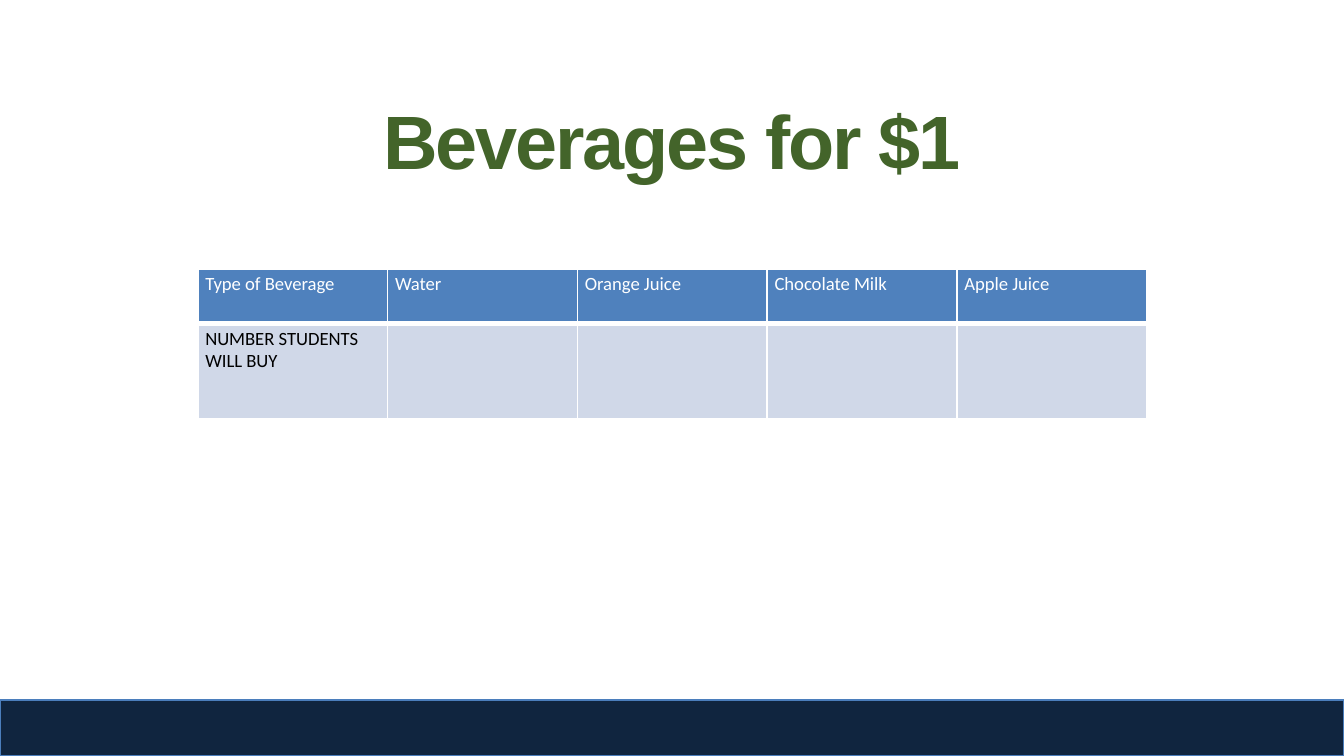
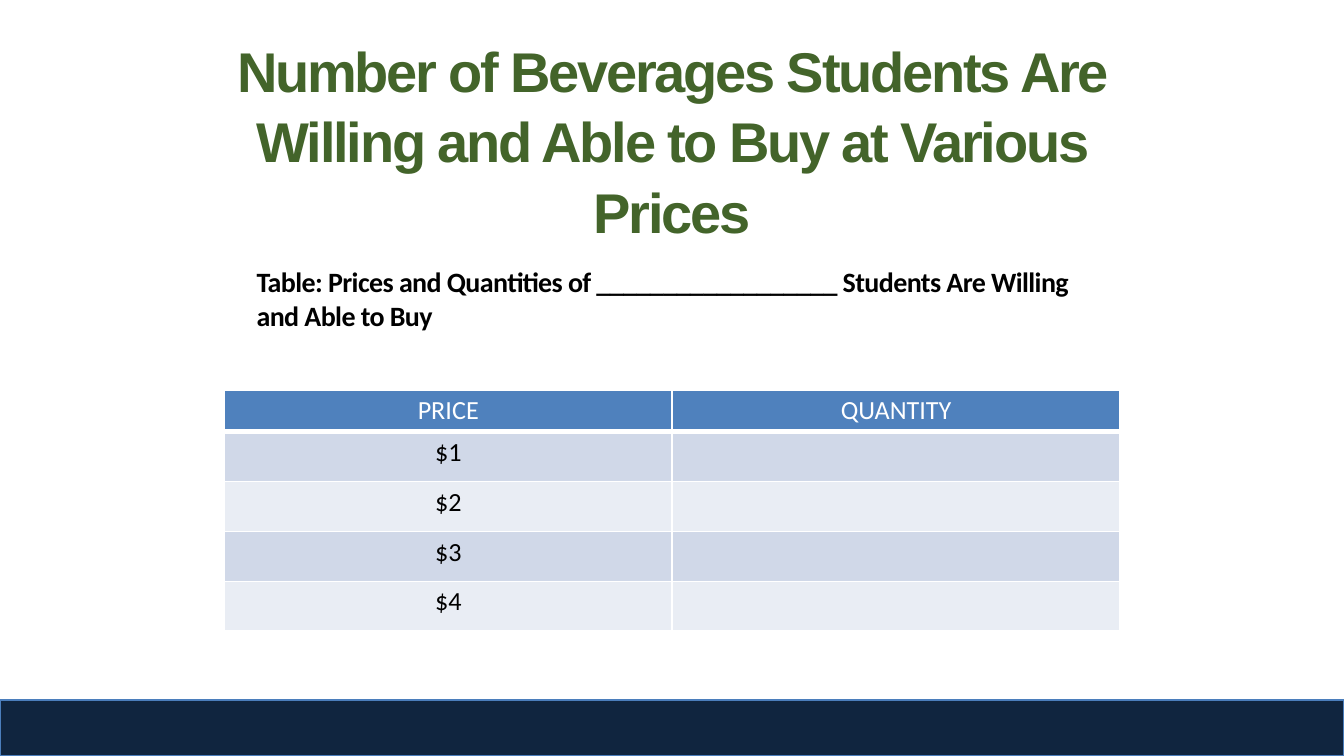
from lxml.etree import SubElement
from pptx import Presentation
from pptx.dml.color import RGBColor as Rgb
from pptx.enum.shapes import MSO_SHAPE as Shape
from pptx.enum.text import MSO_ANCHOR as Anchor, PP_ALIGN as Align
from pptx.oxml.ns import qn
from pptx.util import Cm, Pt

COLORS = {
    "title": "43642A",
    "band": "10253F",
    "band_line": "4B7EBC",
    "header": "4F81BD",
    "dark_row": "D0D8E8",
    "light_row": "E9EDF4",
    "white": "FFFFFF",
    "black": "000000",
}
PAGE_WIDTH, PAGE_HEIGHT = 25.4, 14.29
BAND_HEIGHT = 1.06
TITLE_BOX = (3.25, 1.09, 18.9, 3.07)


def color(name):
    """Return the named colour."""
    return Rgb.from_string(COLORS[name])


def write(frame, text, size, font="Calibri", ink="black", bold=False,
          align=Align.LEFT, tracking=0, leading=None):
    """Write one formatted paragraph into a text frame."""
    frame.word_wrap = True
    para = frame.paragraphs[0]
    para.alignment = align
    if leading:
        para.line_spacing = leading
    span = para.add_run()
    span.text = text
    span.font.size = Pt(size)
    span.font.name = font
    span.font.bold = bold
    span.font.color.rgb = color(ink)
    if tracking:
        span.font._element.set("spc", str(round(tracking * 100)))


def add_text(page, box, text, size, anchor=Anchor.TOP, **style):
    """Place a text box in the given box."""
    frame = page.shapes.add_textbox(*map(Cm, box)).text_frame
    frame.vertical_anchor = anchor
    write(frame, text, size, **style)


def add_title(page, text, size, leading=None):
    """Place the slide title."""
    add_text(page, TITLE_BOX, text, size, Anchor.MIDDLE, font="Arial", ink="title",
             bold=True, align=Align.CENTER, tracking=-1.2, leading=leading)


def add_band(page):
    """Draw the band along the foot of the page."""
    band = page.shapes.add_shape(Shape.RECTANGLE, 0, Cm(PAGE_HEIGHT - BAND_HEIGHT),
                                 Cm(PAGE_WIDTH), Cm(BAND_HEIGHT))
    band.shadow.inherit = False
    band.fill.solid()
    band.fill.fore_color.rgb = color("band")
    band.line.color.rgb = color("band_line")
    band.line.width = Pt(0.75)


def add_borders(cell, bottom):
    """Give a cell white borders, with its own width at the bottom."""
    properties = cell._tc.get_or_add_tcPr()
    for side, width in (("L", 1), ("R", 1), ("T", 1), ("B", bottom)):
        line = SubElement(properties, qn(f"a:ln{side}"), w=str(Pt(width)))
        fill = SubElement(line, qn("a:solidFill"))
        SubElement(fill, qn("a:srgbClr"), val=COLORS["white"])


def add_table(page, box, rows, heights, size, insets, align=Align.LEFT):
    """Place a table with a header row and alternating body rows."""
    table = page.shapes.add_table(len(rows), len(rows[0]), *map(Cm, box)).table
    table.first_row = table.horz_banding = False
    for column in table.columns:
        column.width = Cm(box[2] / len(rows[0]))
    for i, (texts, height) in enumerate(zip(rows, heights)):
        table.rows[i].height = Cm(height)
        header = i == 0
        shade = "header" if header else ("light_row", "dark_row")[i % 2]
        for j, text in enumerate(texts):
            cell = table.cell(i, j)
            cell.margin_left = cell.margin_right = Cm(insets[0])
            cell.margin_top = cell.margin_bottom = Cm(insets[1])
            add_borders(cell, 3 if header else 1)
            cell.fill.solid()
            cell.fill.fore_color.rgb = color(shade)
            write(cell.text_frame, text, size, align=align,
                  ink="white" if header else "black")


def add_page(deck):
    """Add a blank page with the foot band."""
    page = deck.slides.add_slide(deck.slide_layouts[6])
    add_band(page)
    return page


def build_beverages(deck):
    """Build the slide that counts beverages sold for one dollar."""
    page = add_page(deck)
    add_title(page, "Beverages for $1", 40.5)
    rows = [
        ["Type of Beverage", "Water", "Orange Juice", "Chocolate Milk", "Apple Juice"],
        ["NUMBER STUDENTS WILL BUY"] + [""] * 4,
    ]
    add_table(page, (3.74, 5.09, 17.93, 2.82), rows, (1.03, 1.79), 10, (0.14, 0.07))


def build_prices(deck):
    """Build the slide with the price and quantity table."""
    page = add_page(deck)
    add_title(page, "Number of Beverages Students Are Willing and Able to Buy "
              "at Various Prices", 30, leading=1.05)
    add_text(page, (4.6, 4.88, 16.2, 1.6),
             "Table: Prices and Quantities of __________________ "
             "Students Are Willing and Able to Buy", 15, bold=True, tracking=-0.3)
    rows = [["PRICE", "QUANTITY"]] + [[f"${price}", ""] for price in range(1, 5)]
    add_table(page, (4.24, 7.37, 16.93, 3.95), rows, [0.79] * 5, 14, (0.18, 0.09),
              Align.CENTER)


def main():
    """Build and save the deck."""
    deck = Presentation()
    deck.slide_width, deck.slide_height = Cm(PAGE_WIDTH), Cm(PAGE_HEIGHT)
    build_beverages(deck)
    build_prices(deck)
    deck.save("out.pptx")


if __name__ == "__main__":
    main()
